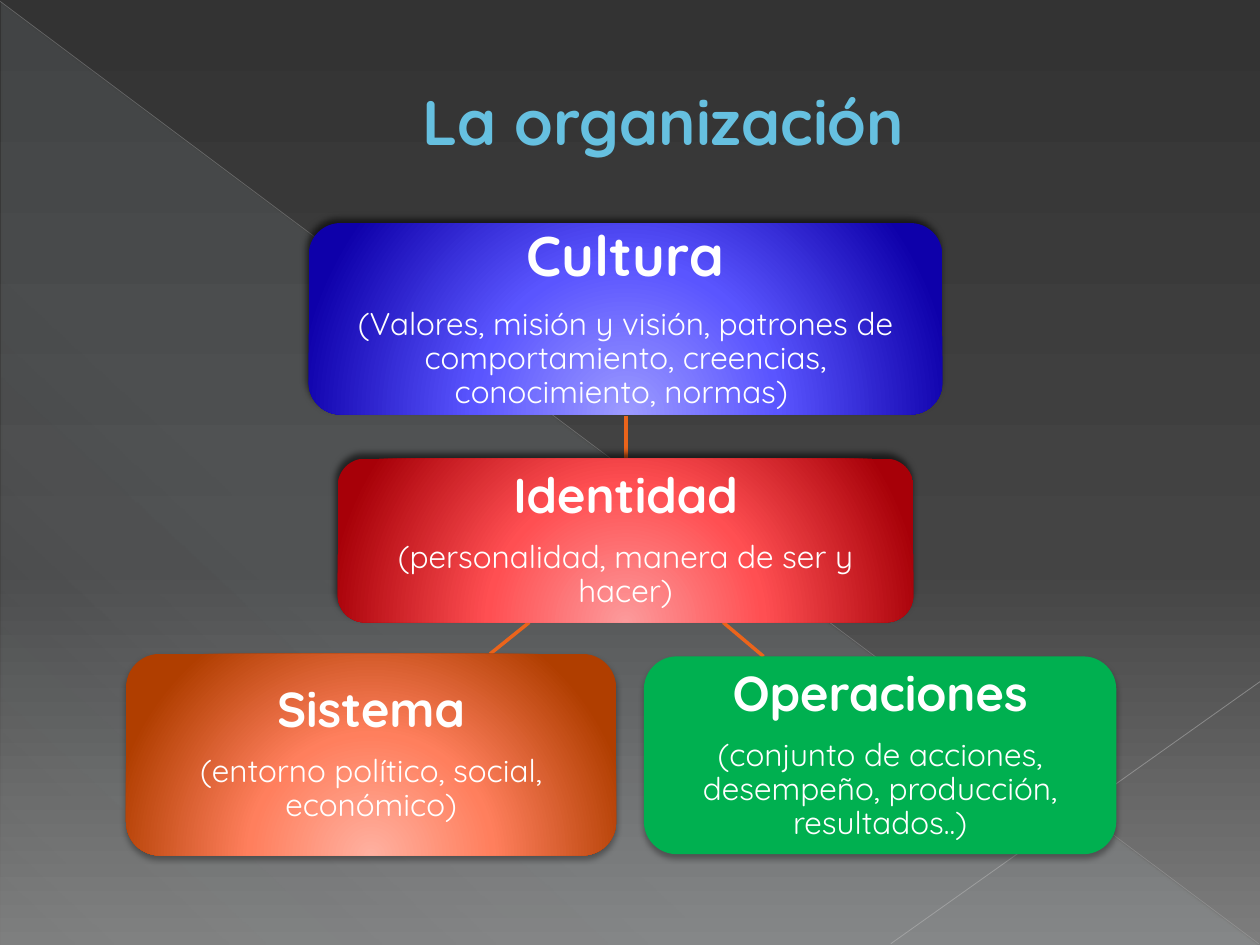
from lxml import etree
from pptx import Presentation
from pptx.dml.color import RGBColor as RGB
from pptx.enum.shapes import MSO_CONNECTOR as Link, MSO_SHAPE as Shape
from pptx.enum.text import MSO_ANCHOR as Anchor, PP_ALIGN as Align
from pptx.oxml import parse_xml
from pptx.oxml.ns import nsdecls, qn
from pptx.util import Inches, Pt

FONT = "Quicksand"
COLORS = {
    "title": "66C0E0", "edge": "1F7084", "text": "FFFFFF", "link": "EB641B",
    "ray": "B9B9B9", "ray2": "C1C1C1", "glass": "DEF5FA", "green": "00B050",
}
BACK = [(0, "333333", 100), (60, "444444", 100), (100, "7D7D7D", 100)]
GLASS = [(0, COLORS["glass"], 10), (70, COLORS["glass"], 8), (100, COLORS["glass"], 1)]
BLUE = [(0, "9D9BFF", 100), (46, "5A55FF", 100), (100, "0E00AA", 100)]
RED = [(0, "FC9A9B", 100), (46, "FF4F52", 100), (100, "A70008", 100)]
RUST = [(0, "FFB0A0", 100), (46, "FF7F5D", 100), (100, "B03E00", 100)]
GLOW = '<a:path path="circle"><a:fillToRect l="50000" t="155000" r="50000" b="-55000"/></a:path>'


def blend(parent, stops, kind):
    """Replace the solid fill of parent with a gradient of (place, colour, opacity) stops."""
    marks = "".join(
        f'<a:gs pos="{place * 1000}"><a:srgbClr val="{color}">'
        f'<a:alpha val="{alpha * 1000}"/></a:srgbClr></a:gs>'
        for place, color, alpha in stops)
    grad = parse_xml(f'<a:gradFill {nsdecls("a")} rotWithShape="1">'
                     f'<a:gsLst>{marks}</a:gsLst>{kind}</a:gradFill>')
    parent.replace(parent.find(qn("a:solidFill")), grad)


def connect(x1, y1, x2, y2, color, width, alpha=100):
    line = slide.shapes.add_connector(
        Link.STRAIGHT, Inches(x1), Inches(y1), Inches(x2), Inches(y2))
    line.line.color.rgb = RGB.from_string(COLORS[color])
    line.line.width = Pt(width)
    props = line.element.spPr
    tint = props.find(".//" + qn("a:srgbClr"))
    etree.SubElement(tint, qn("a:alpha"), val=str(alpha * 1000))
    etree.SubElement(props, qn("a:effectLst"))


deck = Presentation()
deck.slide_width, deck.slide_height = Inches(10), Inches(7.5)
slide = deck.slides.add_slide(deck.slide_layouts[5])

# Background
slide.background.fill.solid()
blend(slide.element.find(".//" + qn("p:bgPr")), BACK, '<a:lin ang="5400000" scaled="0"/>')
glass = slide.shapes.add_shape(
    Shape.RIGHT_TRIANGLE, Inches(0.01), Inches(0.02), Inches(9.98), Inches(7.48))
glass.shadow.inherit = False
glass.line.fill.background()
glass.fill.solid()
blend(glass.element.spPr, GLASS, '<a:lin ang="7980000" scaled="0"/>')
connect(0, 0.01, 9.99, 7.49, "ray", 0.39, 35)
connect(10, 5.41, 7.07, 7.49, "ray2", 0.47, 45)

# Title
title = slide.shapes.title
title.left, title.top = Inches(0.5), Inches(0.29)
title.width, title.height = Inches(9), Inches(1.33)
frame = title.text_frame
frame.vertical_anchor = Anchor.MIDDLE
para = frame.paragraphs[0]
para.alignment = Align.CENTER
para._p.get_or_add_pPr().set("marL", str(Inches(0.53)))
run = para.add_run()
run.text = "La organización"
run.font.name, run.font.size, run.font.bold = FONT, Pt(36), True
run.font.color.rgb = RGB.from_string(COLORS["title"])
run._r.get_or_add_rPr().insert(0, parse_xml(
    f'<a:ln {nsdecls("a")} w="{Pt(0.5)}"><a:solidFill>'
    f'<a:srgbClr val="{COLORS["edge"]}"/></a:solidFill></a:ln>'))

# Links between the boxes
for ends in [(4.97, 3.3, 4.97, 3.64), (5.74, 4.94, 6.06, 5.21), (4.2, 4.94, 3.89, 5.19)]:
    connect(*ends, "link", 2)

# Boxes: place, fill, shadow (opacity, blur, distance, angle), heading, size, detail
HIGH, LOW = (60, 4, 3, 245), (32, 3.5, 2.2, 90)
boxes = [
    ((2.68, 3.64, 4.57, 1.3), RED, HIGH, "Identidad", 28,
     "(personalidad, manera de ser y hacer)"),
    ((2.45, 1.77, 5.03, 1.52), BLUE, HIGH, "Cultura", 32,
     "(Valores, misión y visión, patrones de comportamiento, creencias, "
     "conocimiento, normas) "),
    ((5.11, 5.21, 3.75, 1.57), None, LOW, "Operaciones", 28,
     "(conjunto de acciones, desempeño, producción, resultados..)"),
    ((1, 5.19, 3.89, 1.6), RUST, LOW, "Sistema", 28,
     "(entorno político, social, económico)"),
]
for place, stops, (alpha, blur, gap, angle), head, size, detail in boxes:
    box = slide.shapes.add_shape(Shape.ROUNDED_RECTANGLE, *map(Inches, place))
    box.line.fill.background()
    box.fill.solid()
    box.fill.fore_color.rgb = RGB.from_string(COLORS["green"])
    props = box.element.spPr
    if stops:
        blend(props, stops, GLOW)
    props.append(parse_xml(
        f'<a:effectLst {nsdecls("a")}><a:outerShdw blurRad="{Pt(blur)}" dist="{Pt(gap)}" '
        f'dir="{angle * 60000}" algn="ctr" rotWithShape="0"><a:srgbClr val="000000">'
        f'<a:alpha val="{alpha * 1000}"/></a:srgbClr></a:outerShdw></a:effectLst>'))
    frame = box.text_frame
    frame.word_wrap = True
    frame.vertical_anchor = Anchor.MIDDLE
    frame.margin_left = frame.margin_right = Inches(0.08)
    frame.margin_top = frame.margin_bottom = Inches(0.08)
    for text, points, bold in [(head, size, True), (detail, 18, False)]:
        para = frame.paragraphs[0] if bold else frame.add_paragraph()
        para.alignment = Align.CENTER
        para.line_spacing = 0.9
        para.space_after = Pt(round(points * 0.35, 1))
        run = para.add_run()
        run.text = text
        run.font.name, run.font.size, run.font.bold = FONT, Pt(points), bold
        run.font.color.rgb = RGB.from_string(COLORS["text"])

deck.save("out.pptx")
